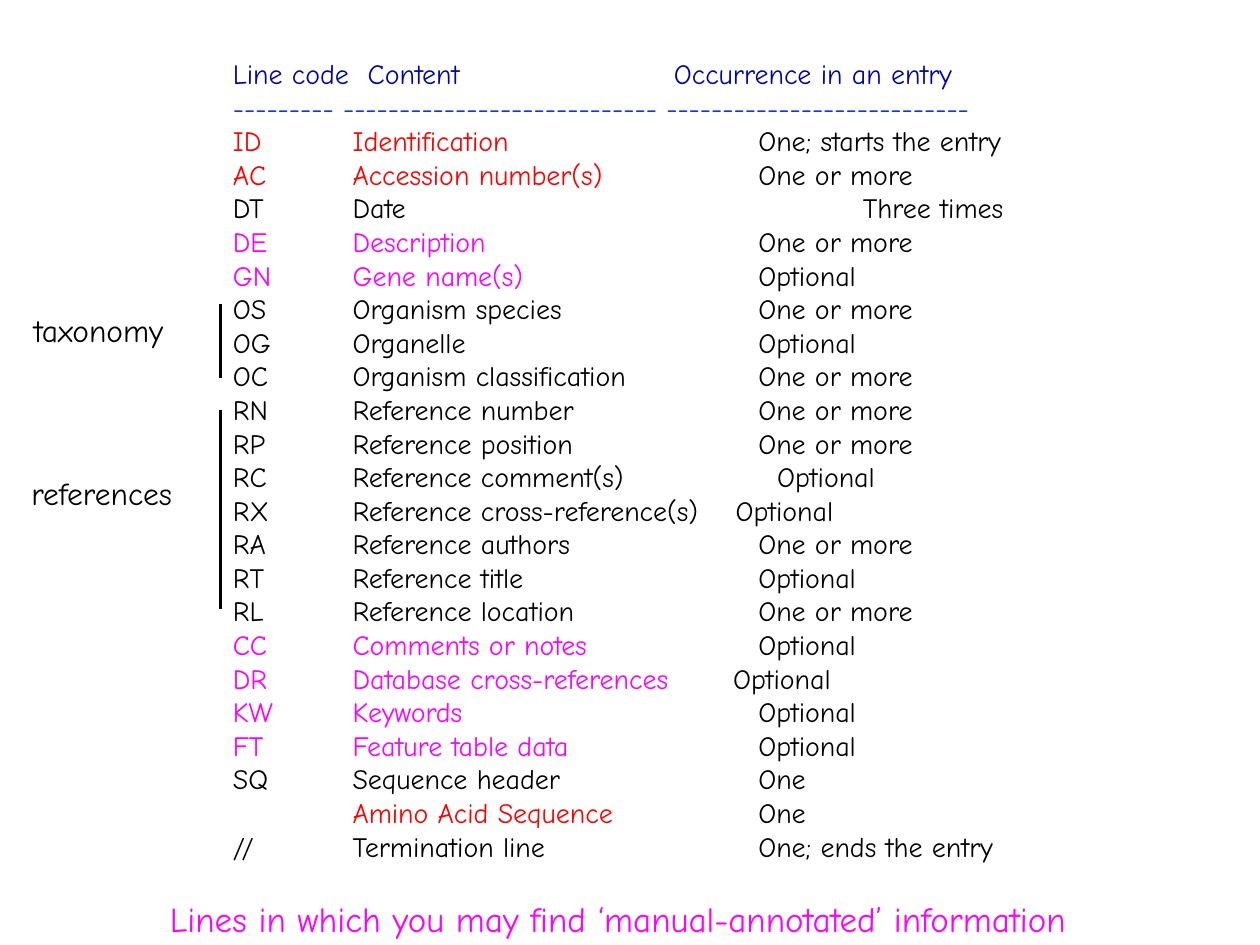
from lxml.etree import SubElement
from pptx import Presentation
from pptx.dml.color import RGBColor
from pptx.enum.shapes import MSO_CONNECTOR
from pptx.oxml.ns import qn
from pptx.util import Inches, Pt

COLORS = {
    "heading": "0007A4",
    "rule": "063DE8",
    "key": "FF0000",
    "manual": "FF00FF",
    "plain": "000000",
}
CONTENT_TAB, OCCURRENCE_TAB = 0.95, 4.17

# line code, content, occurrence, colour of code and content
entry_lines = [
    ("ID", "Identification", "One; starts the entry", "key"),
    ("AC", "Accession number(s)", "One or more", "key"),
    ("DT", "Date", "Three times", "plain"),
    ("DE", "Description", "One or more", "manual"),
    ("GN", "Gene name(s)", "Optional", "manual"),
    ("OS", "Organism species", "One or more", "plain"),
    ("OG", "Organelle", "Optional", "plain"),
    ("OC", "Organism classification", "One or more", "plain"),
    ("RN", "Reference number", "One or more", "plain"),
    ("RP", "Reference position", "One or more", "plain"),
    ("RC", "Reference comment(s)", "Optional", "plain"),
    ("RX", "Reference cross-reference(s)", "Optional", "plain"),
    ("RA", "Reference authors", "One or more", "plain"),
    ("RT", "Reference title", "Optional", "plain"),
    ("RL", "Reference location", "One or more", "plain"),
    ("CC", "Comments or notes", "Optional", "manual"),
    ("DR", "Database cross-references", "Optional", "manual"),
    ("KW", "Keywords", "Optional", "manual"),
    ("FT", "Feature table data", "Optional", "manual"),
    ("SQ", "Sequence header", "One", "plain"),
    ("", "Amino Acid Sequence", "One", "key"),
    ("//", "Termination line", "One; ends the entry", "plain"),
]
occurrence_tabs = {"DT": 5.0, "RC": 4.32, "RX": 3.99, "DR": 3.97}


def add_run(paragraph, text, size=16, color="plain"):
    run = paragraph.add_run()
    run.text = text
    run.font.name = "Comic Neue"
    run.font.size = Pt(size)
    run.font.color.rgb = RGBColor.from_string(COLORS[color])


def set_tabs(paragraph, *positions):
    tab_list = SubElement(paragraph._p.get_or_add_pPr(), qn("a:tabLst"))
    for position in positions:
        SubElement(tab_list, qn("a:tab"), pos=str(Inches(position)), algn="l")


prs = Presentation()
prs.slide_width, prs.slide_height = Inches(10), Inches(7.5)
slide = prs.slides.add_slide(prs.slide_layouts[6])

# Listing of line codes
listing = slide.shapes.add_textbox(
    Inches(1.75), Inches(0), Inches(6.62), Inches(6.9)
).text_frame
listing.word_wrap = True
listing.margin_top = Inches(0.45)

heading = listing.paragraphs[0]
set_tabs(heading, 1.07, 3.5)
add_run(heading, "Line code\tContent\tOccurrence in an entry", color="heading")
add_run(listing.add_paragraph(), " ".join("-" * n for n in (9, 28, 27)), color="rule")

for code, content, occurrence, color in entry_lines:
    entry = listing.add_paragraph()
    set_tabs(entry, CONTENT_TAB, occurrence_tabs.get(code, OCCURRENCE_TAB))
    add_run(entry, f"{code}\t{content}\t", color=color)
    add_run(entry, occurrence)

# Caption and group labels
for text, left, top, width, height, size, color in [
    ("Lines in which you may find ‘manual-annotated’ information",
     1.25, 7.07, 7.75, 0.49, 20, "manual"),
    ("taxonomy", 0.17, 2.42, 1.31, 0.45, 18, "plain"),
    ("references", 0.15, 3.71, 1.5, 0.45, 18, "plain"),
]:
    label = slide.shapes.add_textbox(
        Inches(left), Inches(top), Inches(width), Inches(height)
    ).text_frame
    label.word_wrap = True
    add_run(label.paragraphs[0], text, size=size, color=color)

# Bars beside the taxonomy and reference groups
for top, bottom in [(2.41, 3), (3.25, 4.83)]:
    bar = slide.shapes.add_connector(
        MSO_CONNECTOR.STRAIGHT, Inches(1.75), Inches(top), Inches(1.75), Inches(bottom)
    )
    bar.line.color.rgb = RGBColor.from_string(COLORS["plain"])
    bar.line.width = Pt(2)
    SubElement(bar._element.spPr, qn("a:effectLst"))

prs.save("out.pptx")
